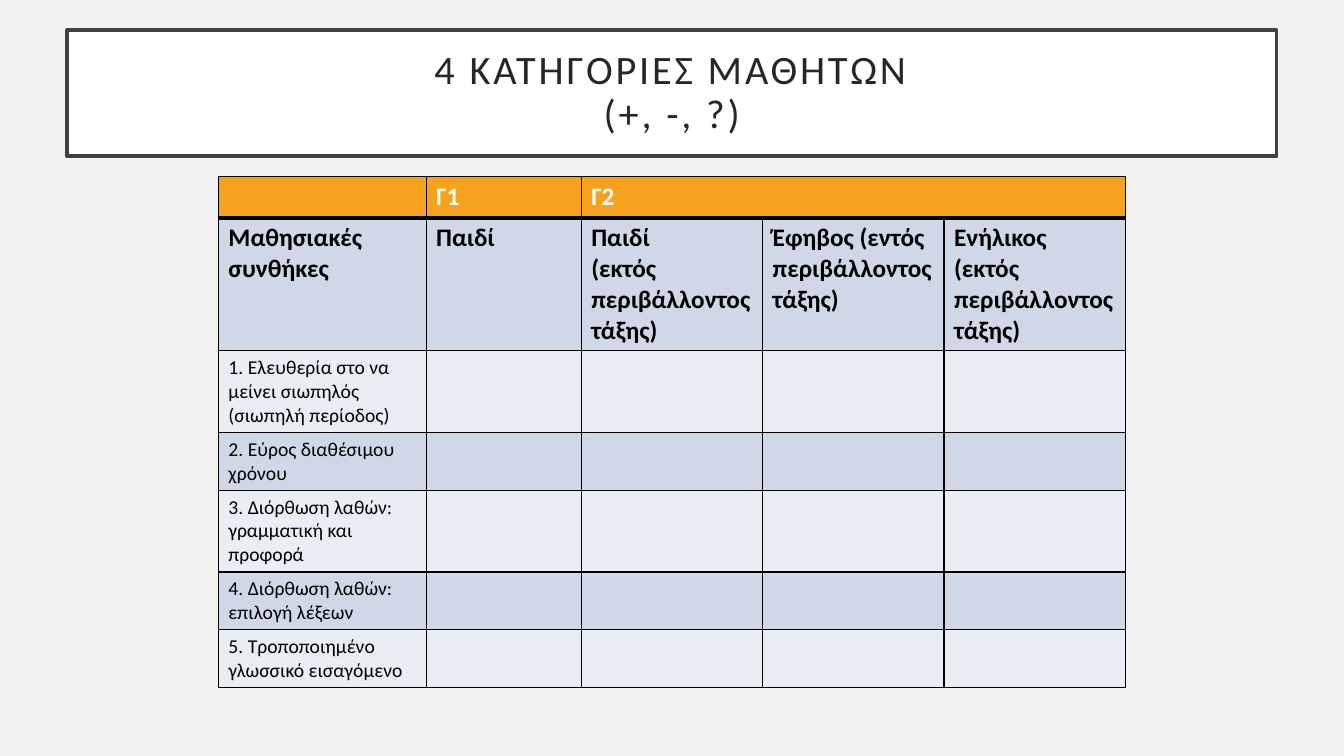
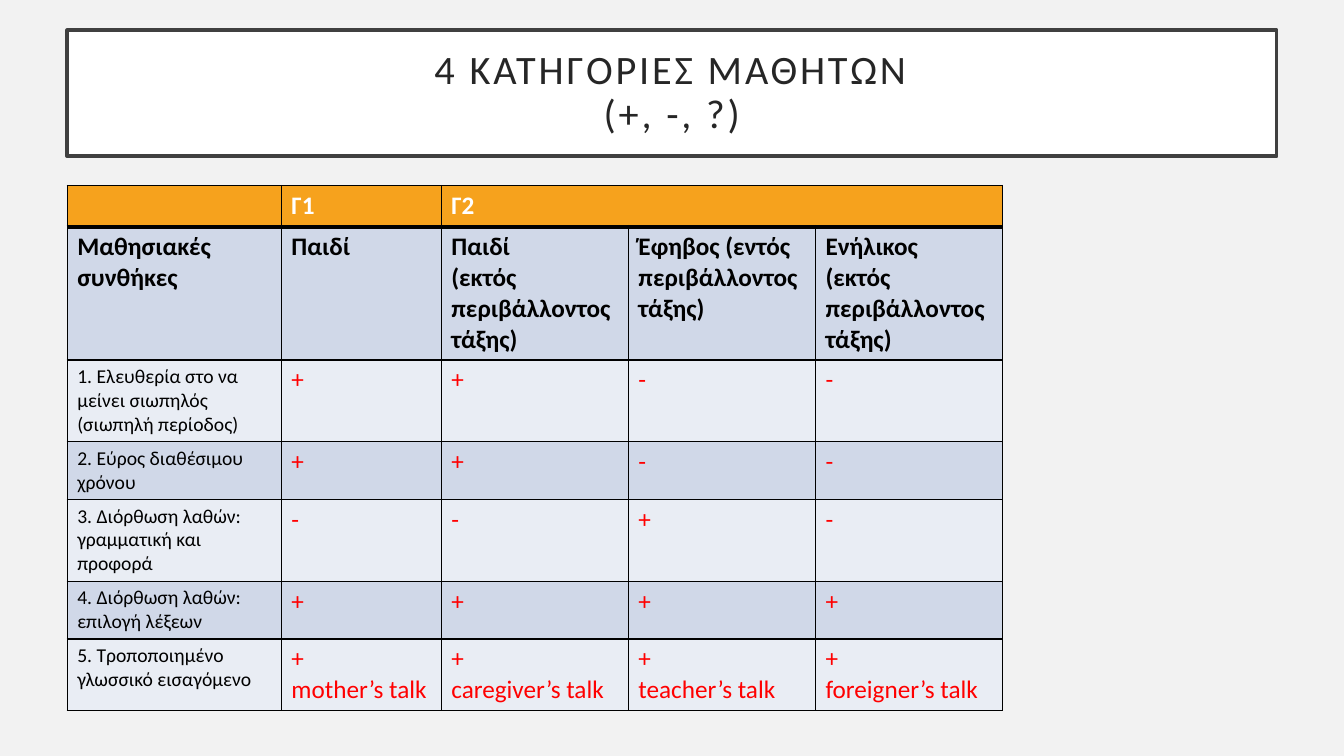
import pptx
import pptx.dml.color
import pptx.enum.shapes
import pptx.enum.text
import pptx.oxml
import pptx.oxml.ns
import pptx.util

W = pptx.util.Inches(13.33)
H = pptx.util.Inches(7.5)
FONT = "Calibri"
COLORS = {
    "background": "F2F2F2",
    "panel": "FFFFFF",
    "frame": "404040",
    "title": "262626",
    "header": "F6A21D",
    "header_text": "FFFFFF",
    "dark_band": "D0D8E8",
    "light_band": "E9EDF4",
    "text": "000000",
    "answer": "FF0000",
    "border": "000000",
}

TITLE = ["4 ΚΑΤΗΓΟΡΙΕΣ ΜΑΘΗΤΩΝ", "(+, -, ?)"]
HEADER = ["", "Γ1", "Γ2", "", ""]
LEARNERS = [
    "Μαθησιακές συνθήκες",
    "Παιδί",
    "Παιδί\n(εκτός περιβάλλοντος τάξης)",
    "Έφηβος (εντός περιβάλλοντος τάξης)",
    "Ενήλικος\n(εκτός περιβάλλοντος τάξης)",
]
CONDITIONS = [
    "1. Ελευθερία στο να μείνει σιωπηλός (σιωπηλή περίοδος)",
    "2. Εύρος διαθέσιμου χρόνου",
    "3. Διόρθωση λαθών: γραμματική και προφορά",
    "4. Διόρθωση λαθών: επιλογή λέξεων",
    "5. Τροποποιημένο γλωσσικό εισαγόμενο",
]
NO_ANSWERS = [[""] * 4 for _ in CONDITIONS]
ANSWERS = [
    ["+", "+", "-", "-"],
    ["+", "+", "-", "-"],
    ["-", "-", "+", "-"],
    ["+", "+", "+", "+"],
    ["+\nmother’s talk", "+\ncaregiver’s talk", "+\nteacher’s talk", "+\nforeigner’s talk"],
]

COLUMN_PERCENTS = [22.9, 17.1, 20, 20, 20]
ROW_PERCENTS = [5.47, 17.33, 10.67, 7.6, 10.67, 7.6, 7.6]


def percent(whole, share):
    return int(whole * share / 100)


def rgb(name):
    return pptx.dml.color.RGBColor.from_string(COLORS[name])


def paint(fill, color):
    fill.solid()
    fill.fore_color.rgb = rgb(color)


def add_run(p, text, size, color, bold=False):
    r = p.add_run()
    r.text = text
    r.font.name = FONT
    r.font.size = pptx.util.Pt(size)
    r.font.bold = bold
    r.font.color.rgb = rgb(color)
    return r


def add_title(slide):
    sp = slide.shapes.add_shape(
        pptx.enum.shapes.MSO_SHAPE.RECTANGLE,
        percent(W, 5), percent(H, 4), percent(W, 90), percent(H, 16.67))
    sp.shadow.inherit = False
    paint(sp.fill, "panel")
    sp.line.color.rgb = rgb("frame")
    sp.line.width = pptx.util.Pt(2.5)
    tf = sp.text_frame
    tf.word_wrap = True
    tf.vertical_anchor = pptx.enum.text.MSO_ANCHOR.MIDDLE
    tf.margin_left = tf.margin_right = pptx.util.Inches(0.2)
    tf.margin_top = tf.margin_bottom = pptx.util.Inches(0.2)
    p = tf.paragraphs[0]
    p.alignment = pptx.enum.text.PP_ALIGN.CENTER
    p.line_spacing = 0.9
    for i, line in enumerate(TITLE):
        if i:
            p.add_line_break()
        r = add_run(p, line, 28.8, "title")
        r.font._element.set("spc", "200")


def set_borders(cell, widths):
    tc_pr = cell._tc.get_or_add_tcPr()
    for side, width in zip("LRTB", widths):
        tc_pr.append(pptx.oxml.parse_xml(
            f'<a:ln{side} {pptx.oxml.ns.nsdecls("a")} w="{pptx.util.Pt(width)}">'
            f'<a:solidFill><a:srgbClr val="{COLORS["border"]}"/></a:solidFill>'
            f'</a:ln{side}>'))


def cell_style(row, col):
    if row == 0:
        return 18, "header_text", True
    if row == 1:
        return 18, "text", True
    if col == 0:
        return 14, "text", False
    return 18, "answer", False


def row_fill(row):
    if row == 0:
        return "header"
    return "dark_band" if row % 2 else "light_band"


def fill_cell(cell, text, row, col):
    set_borders(cell, (1, 1, 3 if row == 1 else 1, 3 if row == 0 else 1))
    paint(cell.fill, row_fill(row))
    if not text:
        return
    tf = cell.text_frame
    for i, line in enumerate(text.split("\n")):
        p = tf.add_paragraph() if i else tf.paragraphs[0]
        add_run(p, line, *cell_style(row, col))


def add_conditions_table(slide, left, top, width, answers):
    rows = [HEADER, LEARNERS]
    rows += [[condition, *marks] for condition, marks in zip(CONDITIONS, answers)]
    table = slide.shapes.add_table(
        len(rows), len(HEADER), percent(W, left), percent(H, top),
        percent(W, width), percent(H, sum(ROW_PERCENTS))).table
    table.first_row = False
    table.horz_banding = False
    for column, share in zip(table.columns, COLUMN_PERCENTS):
        column.width = percent(percent(W, width), share)
    for row, share in zip(table.rows, ROW_PERCENTS):
        row.height = percent(H, share)
    for i, texts in enumerate(rows):
        for j, text in enumerate(texts):
            fill_cell(table.cell(i, j), text, i, j)
    table.cell(0, 2).merge(table.cell(0, 4))


def add_slide(prs, left, top, width, answers):
    slide = prs.slides.add_slide(prs.slide_layouts[6])
    add_title(slide)
    add_conditions_table(slide, left, top, width, answers)


def main():
    prs = pptx.Presentation()
    prs.slide_width = W
    prs.slide_height = H
    paint(prs.slide_master.background.fill, "background")
    add_slide(prs, 16.25, 23.33, 67.5, NO_ANSWERS)
    add_slide(prs, 5, 24.53, 69.6, ANSWERS)
    prs.save("out.pptx")


if __name__ == "__main__":
    main()
